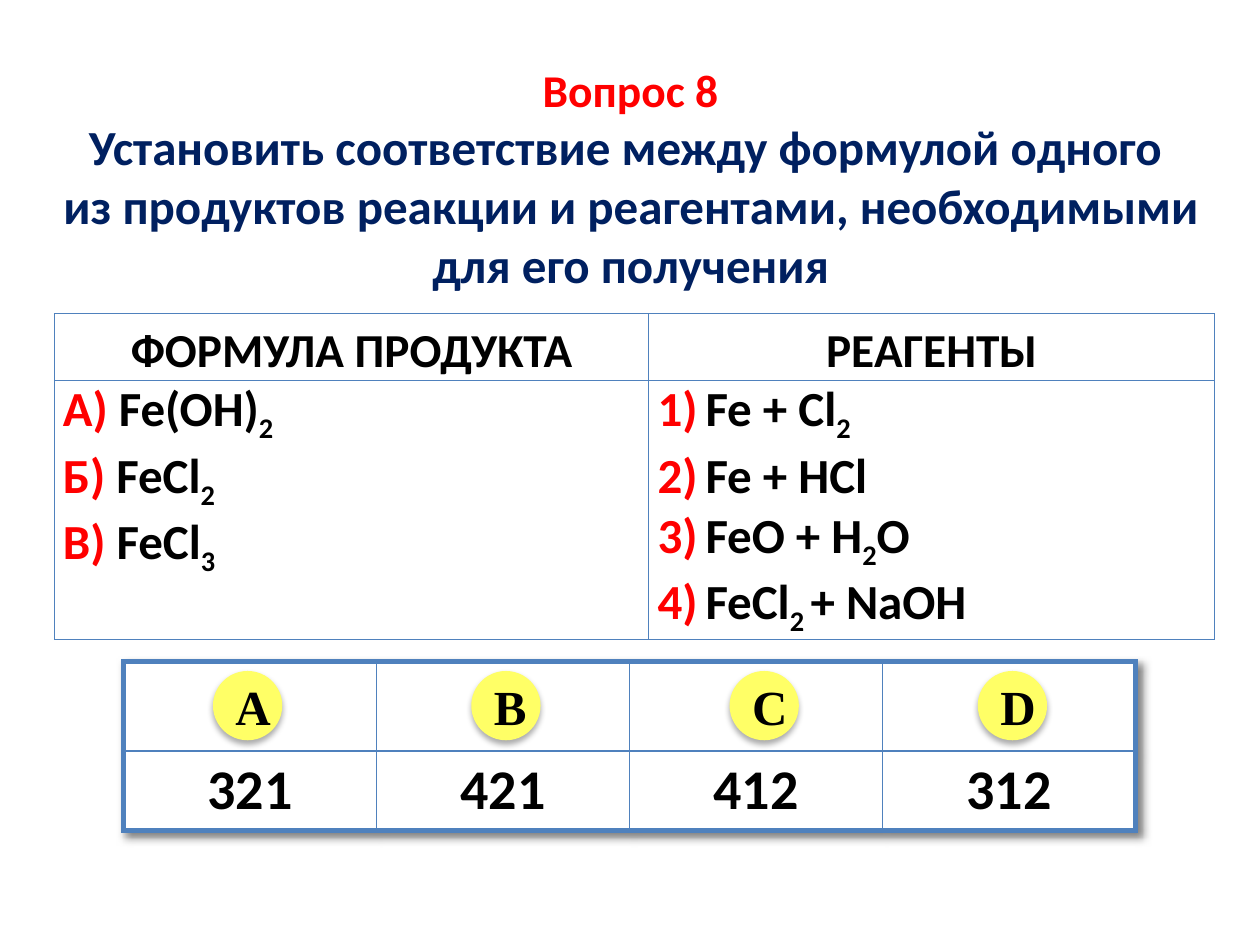
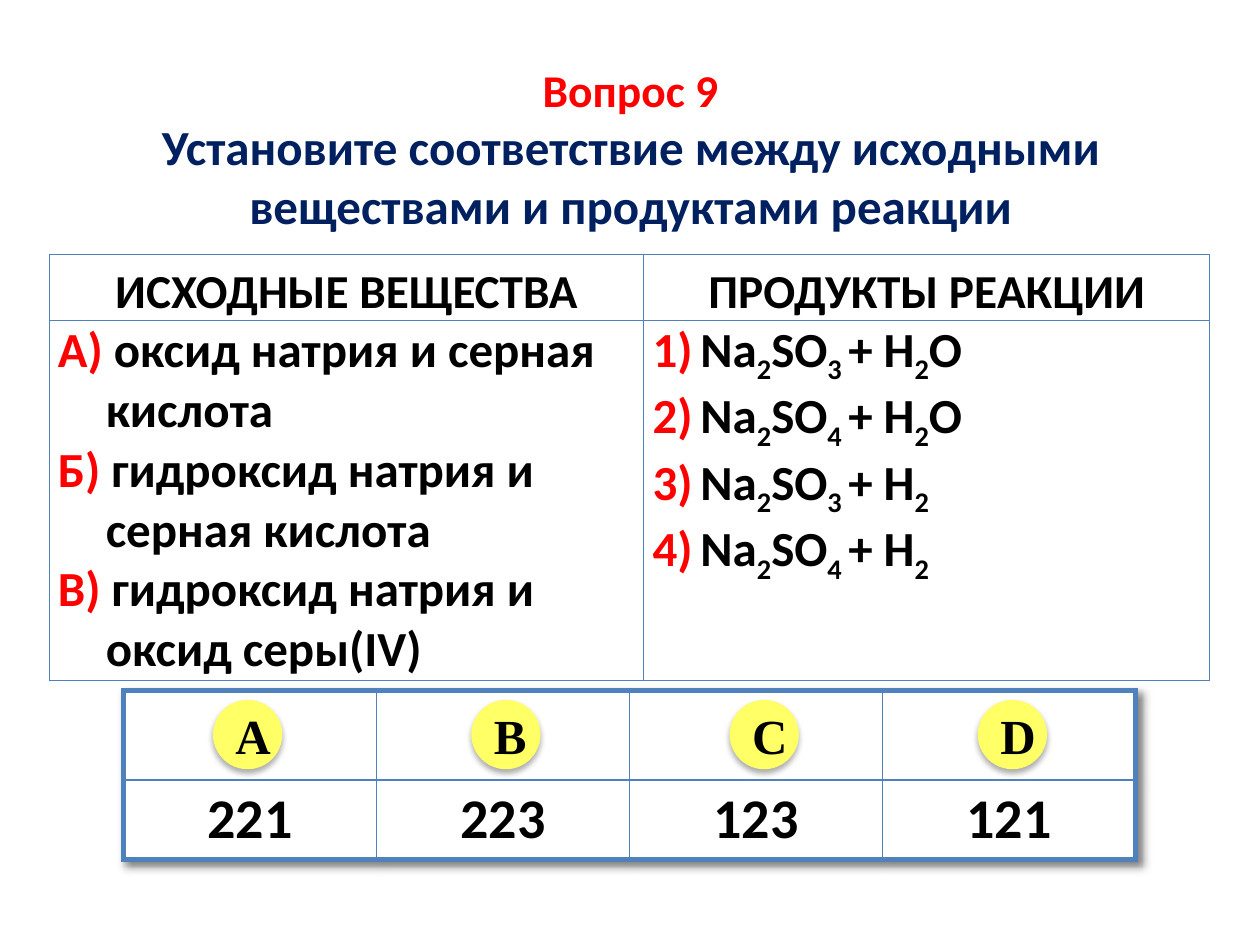
"""Build two chemistry quiz slides with matching tables and answer grids."""
import lxml.etree
import pptx
import pptx.dml.color
import pptx.enum.shapes
import pptx.enum.text
import pptx.oxml.ns
import pptx.util

COLORS = {"red": "FF0000", "navy": "002060", "black": "000000",
          "white": "FFFFFF", "blue": "4F81BD", "yellow": "FFFF66"}
WIDTH, HEIGHT = pptx.util.Inches(10), pptx.util.Inches(7.5)
COLUMNS = 100
BADGES = {"A": 16.9, "B": 37.4, "C": 57.9, "D": 77.6}
ANCHOR = pptx.enum.text.MSO_ANCHOR
CENTER = pptx.enum.text.PP_ALIGN.CENTER

QUIZ = [
    {"title": ["Вопрос 8",
               "Установить соответствие между формулой одного ",
               "из продуктов реакции и реагентами, необходимыми для его получения"],
     "depth": 44.9, "match": (4.3, 24.9), "body": 20.6, "grid": 52.5,
     "heads": ["ФОРМУЛА ПРОДУКТА", "РЕАГЕНТЫ"],
     "left": ["Fe(OH)_2", "FeCl_2", "FeCl_3"],
     "right": ["Fe + Cl_2", "Fe + HCl", "FeO + H_2O", "FeCl_2 + NaOH"],
     "answers": ["321", "421", "412", "312"]},
    {"title": ["Вопрос 9",
               "Установите соответствие между исходными веществами "
               "и продуктами реакции"],
     "depth": 40.2, "match": (3.9, 20.2), "body": 28, "grid": 54.8,
     "heads": ["ИСХОДНЫЕ ВЕЩЕСТВА", "ПРОДУКТЫ РЕАКЦИИ"],
     "left": ["оксид натрия и серная кислота",
              "гидроксид натрия и серная кислота",
              "гидроксид натрия и оксид серы(IV)"],
     "right": ["Na_2SO_3 + H_2O", "Na_2SO_4 + H_2O",
               "Na_2SO_3 + H_2", "Na_2SO_4 + H_2"],
     "answers": ["221", "223", "123", "121"]},
]


def cols(count):
    """Return the length of a number of grid columns."""
    return int(WIDTH * count / COLUMNS)


def rgb(name):
    """Return a palette colour."""
    return pptx.dml.color.RGBColor.from_string(COLORS[name])


def node(parent, tag, **attrs):
    """Append a drawing element and return it."""
    item = lxml.etree.SubElement(parent, pptx.oxml.ns.qn("a:" + tag))
    for key, value in attrs.items():
        item.set(key, str(value))
    return item


def style(font, size, color="black", face="Calibri"):
    """Set a bold font."""
    font.name, font.size, font.bold = face, pptx.util.Pt(size), True
    font.color.rgb = rgb(color)


def shade(effects, blur, gap, angle, alpha):
    """Add an outer shadow to an effect list."""
    shadow = node(effects, "outerShdw", blurRad=pptx.util.Pt(blur),
                  dist=pptx.util.Pt(gap), dir=angle * 60000, rotWithShape=0)
    tint = node(shadow, "srgbClr", val=COLORS["black"])
    node(tint, "alpha", val=alpha * 1000)


def edge(cell, widths):
    """Draw cell borders, widths given as left, right, top, bottom."""
    props = cell._tc.get_or_add_tcPr()
    for spot, (side, width) in enumerate(zip("LRTB", widths)):
        line = node(props, "ln" + side, w=pptx.util.Pt(width))
        node(node(line, "solidFill"), "srgbClr", val=COLORS["blue"])
        props.insert(spot, line)


def add_grid(slide, left, top, widths, heights, outer, inner):
    """Add a plain table with outer and inner borders."""
    rows, count = len(heights), len(widths)
    table = slide.shapes.add_table(rows, count, cols(left), cols(top),
                                   cols(sum(widths)), cols(sum(heights))).table
    table.first_row = table.horz_banding = False
    for column, width in zip(table.columns, widths):
        column.width = cols(width)
    for row, height in zip(table.rows, heights):
        row.height = cols(height)
    for r in range(rows):
        for c in range(count):
            cell = table.cell(r, c)
            cell.margin_left = cell.margin_right = cols(0.7)
            cell.margin_top = cell.margin_bottom = 0
            cell.fill.background()
            ends = (c == 0, c == count - 1, r == 0, r == rows - 1)
            edge(cell, [outer if end else inner for end in ends])
    return table


def put(cell, text, size):
    """Write centred text into a cell."""
    cell.vertical_anchor = ANCHOR.MIDDLE
    para = cell.text_frame.paragraphs[0]
    para.text, para.alignment = text, CENTER
    style(para.runs[0].font, size)
    return para


def add_run(para, text, color="black", low=False):
    """Append a run, lowered when it is an index."""
    if text:
        run = para.add_run()
        run.text = text
        style(run.font, 28, color)
        if low:
            run._r.get_or_add_rPr().set("baseline", "-25000")


def spell(para, formula):
    """Write a formula in which an underscore lowers the next digit."""
    first, *parts = formula.split("_")
    add_run(para, first)
    for part in parts:
        cut = 2 if part[1:2] == " " else 1
        add_run(para, part[:cut], low=True)
        add_run(para, part[cut:])


def fill_list(cell, items, marks=None):
    """Write a hanging list with lettered marks or automatic numbers."""
    frame = cell.text_frame
    for index, item in enumerate(items):
        para = frame.add_paragraph() if index else frame.paragraphs[0]
        props = para._p.get_or_add_pPr()
        props.set("marL", str(cols(3.8)))
        props.set("indent", str(-cols(3.8)))
        if marks:
            add_run(para, marks[index] + ") ", "red")
        else:
            node(node(props, "buClr"), "srgbClr", val=COLORS["red"])
            node(props, "buFont", typeface="+mj-lt")
            node(props, "buAutoNum", type="arabicParenR")
        spell(para, item)


def add_title(slide, lines, depth):
    """Place the question in the title placeholder."""
    title = slide.shapes.title
    title.left, title.top = cols(2.8), cols(4.4)
    title.width, title.height = cols(94.5), cols(depth)
    title.fill.solid()
    title.fill.fore_color.rgb = rgb("white")
    frame = title.text_frame
    frame.text = "\n".join(lines)
    frame.vertical_anchor = ANCHOR.TOP
    frame.auto_size = pptx.enum.text.MSO_AUTO_SIZE.NONE
    for index, para in enumerate(frame.paragraphs):
        para.alignment = CENTER
        style(para.runs[0].font, 28 if index else 26, "navy" if index else "red")


def add_match(slide, quiz):
    """Add the two lists to be matched."""
    table = add_grid(slide, *quiz["match"], [47.2, 44.9],
                     [5.2, quiz["body"]], 0.5, 0.5)
    for index, head in enumerate(quiz["heads"]):
        put(table.cell(0, index), head, 27).line_spacing = 1.15
    fill_list(table.cell(1, 0), quiz["left"], "АБВ")
    fill_list(table.cell(1, 1), quiz["right"])


def add_badge(slide, letter, left, top):
    """Add a round letter badge."""
    side = cols(5.5)
    badge = slide.shapes.add_shape(pptx.enum.shapes.MSO_SHAPE.OVAL,
                                   cols(left), cols(top), side, side)
    badge.fill.solid()
    badge.fill.fore_color.rgb = rgb("yellow")
    badge.line.fill.background()
    badge.shadow.inherit = False
    shade(badge._element.spPr.find(pptx.oxml.ns.qn("a:effectLst")), 3.5, 2.2, 90, 32)
    frame = badge.text_frame
    frame.text, frame.vertical_anchor = letter, ANCHOR.MIDDLE
    frame.paragraphs[0].alignment = CENTER
    style(frame.paragraphs[0].runs[0].font, 28, face="Times New Roman")


def add_answers(slide, answers, top):
    """Add the answer grid with its letter badges."""
    table = add_grid(slide, 9.8, top, [20.08] * 4, [7.1, 6.3], 3, 1)
    props = table._tbl.tblPr
    effects = node(props, "effectLst")
    props.insert(0, effects)
    shade(effects, 5, 3, 45, 50)
    for row in table.rows:
        for cell in row.cells:
            cell.fill.solid()
            cell.fill.fore_color.rgb = rgb("white")
    for index, answer in enumerate(answers):
        put(table.cell(1, index), answer, 32)
    for letter, left in BADGES.items():
        add_badge(slide, letter, left, top + 0.75)


def main():
    """Build and save the deck."""
    deck = pptx.Presentation()
    deck.slide_width, deck.slide_height = WIDTH, HEIGHT
    for quiz in QUIZ:
        slide = deck.slides.add_slide(deck.slide_layouts[5])
        add_title(slide, quiz["title"], quiz["depth"])
        add_match(slide, quiz)
        add_answers(slide, quiz["answers"], quiz["grid"])
    deck.save("out.pptx")


if __name__ == "__main__":
    main()
